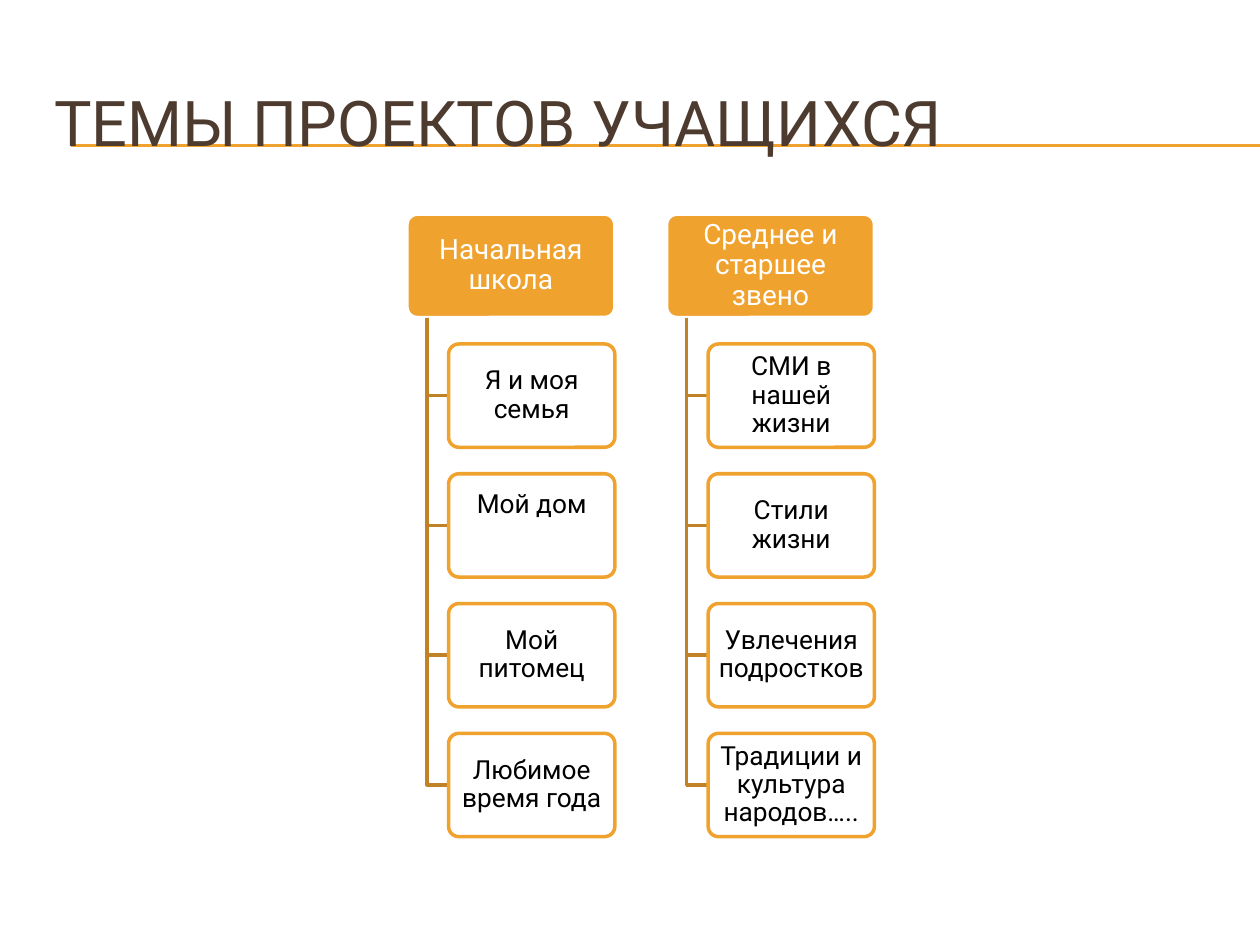
from lxml.etree import SubElement
from pptx import Presentation
from pptx.dml.color import RGBColor
from pptx.enum.shapes import MSO_CONNECTOR, MSO_SHAPE
from pptx.enum.text import MSO_ANCHOR, MSO_AUTO_SIZE, PP_ALIGN
from pptx.oxml.ns import qn
from pptx.util import Inches, Pt

ORANGE, BROWN, DARK = "F0A22E", "C08225", "4E3B30"
WHITE, BLACK = "FFFFFF", "000000"

COLUMNS = [
    ("Начальная школа",
     ["Я и моя семья", "Мой дом", "Мой питомец", "Любимое время года"]),
    ("Среднее и старшее звено",
     ["СМИ в нашей жизни", "Стили жизни", "Увлечения подростков",
      "Традиции и культура народов….."]),
]
LEFT, TOP = 3.23, 1.7
COL_STEP, ROW_STEP = 2.06, 1.03
HEAD_W, ITEM_W, BOX_H = 1.65, 1.32, 0.82
STEM_DX, ITEM_DX = 0.16, 0.33


def rgb(value):
    return RGBColor.from_string(value)


class TopicSlide:
    font = "Roboto"

    def __init__(self, prs):
        self.s = prs.slides.add_slide(prs.slide_layouts[5])

    def run(self, p, text, size, color):
        r = p.add_run()
        r.text = text
        r.font.name = self.font
        r.font.size = Pt(size)
        r.font.color.rgb = rgb(color)

    def title(self, text, x, y, w, h):
        sp = self.s.shapes.title
        sp.left, sp.top, sp.width, sp.height = map(Inches, (x, y, w, h))
        tf = sp.text_frame
        tf.auto_size = MSO_AUTO_SIZE.NONE
        tf.vertical_anchor = MSO_ANCHOR.MIDDLE
        p = tf.paragraphs[0]
        p.alignment = PP_ALIGN.LEFT
        self.run(p, text, 36, DARK)
        sp.element.getparent().append(sp.element)

    def rule(self, x1, x2, y):
        line = self.s.shapes.add_connector(
            MSO_CONNECTOR.STRAIGHT, Inches(x1), Inches(y), Inches(x2), Inches(y))
        line.line.color.rgb = rgb(ORANGE)
        line.line.width = Pt(0.75)
        SubElement(line.element.spPr, qn("a:effectLst"))

    def box(self, text, x, y, w, size, fill, line, color, alpha=100, bottom=0.02):
        sp = self.s.shapes.add_shape(
            MSO_SHAPE.ROUNDED_RECTANGLE, *map(Inches, (x, y, w, BOX_H)))
        sp.adjustments[0] = 0.1
        sp.shadow.inherit = False
        sp.fill.solid()
        sp.fill.fore_color.rgb = rgb(fill)
        if alpha < 100:
            clr = sp.element.spPr.find(qn("a:solidFill")).find(qn("a:srgbClr"))
            SubElement(clr, qn("a:alpha"), val=str(alpha * 1000))
        sp.line.color.rgb = rgb(line)
        sp.line.width = Pt(2)
        tf = sp.text_frame
        tf.word_wrap = True
        tf.vertical_anchor = MSO_ANCHOR.MIDDLE
        tf.margin_left = tf.margin_right = Inches(0.03)
        tf.margin_top = Inches(0.02)
        tf.margin_bottom = Inches(bottom)
        p = tf.paragraphs[0]
        p.alignment = PP_ALIGN.CENTER
        p.line_spacing = 0.9
        self.run(p, text, size, color)

    def branch(self, x1, y1, x2, y2):
        fb = self.s.shapes.build_freeform(Inches(x1), Inches(y1))
        fb.add_line_segments(
            [(Inches(x1), Inches(y2)), (Inches(x2), Inches(y2))], close=False)
        sp = fb.convert_to_shape()
        sp.shadow.inherit = False
        sp.fill.background()
        sp.line.color.rgb = rgb(BROWN)
        sp.line.width = Pt(2)

    def column(self, x, heading, topics):
        self.box(heading, x, TOP, HEAD_W, 16, ORANGE, WHITE, WHITE)
        for row, topic in enumerate(topics, 1):
            y = TOP + row * ROW_STEP
            self.branch(x + STEM_DX, TOP + BOX_H, x + ITEM_DX, y + BOX_H / 2)
            bottom = 0.34 if topic == "Мой дом" else 0.02
            self.box(topic, x + ITEM_DX, y, ITEM_W, 15, WHITE, ORANGE, BLACK,
                     alpha=90, bottom=bottom)


def main():
    prs = Presentation()
    prs.slide_width, prs.slide_height = Inches(10), Inches(7.5)
    slide = TopicSlide(prs)
    for y in (1.15, 1.16):
        slide.rule(0.56, 10, y)
    slide.title("ТЕМЫ ПРОЕКТОВ УЧАЩИХСЯ", 0.33, 0.5, 9.5, 0.92)
    for i, (heading, topics) in enumerate(COLUMNS):
        slide.column(LEFT + i * COL_STEP, heading, topics)
    prs.save("out.pptx")


if __name__ == "__main__":
    main()
